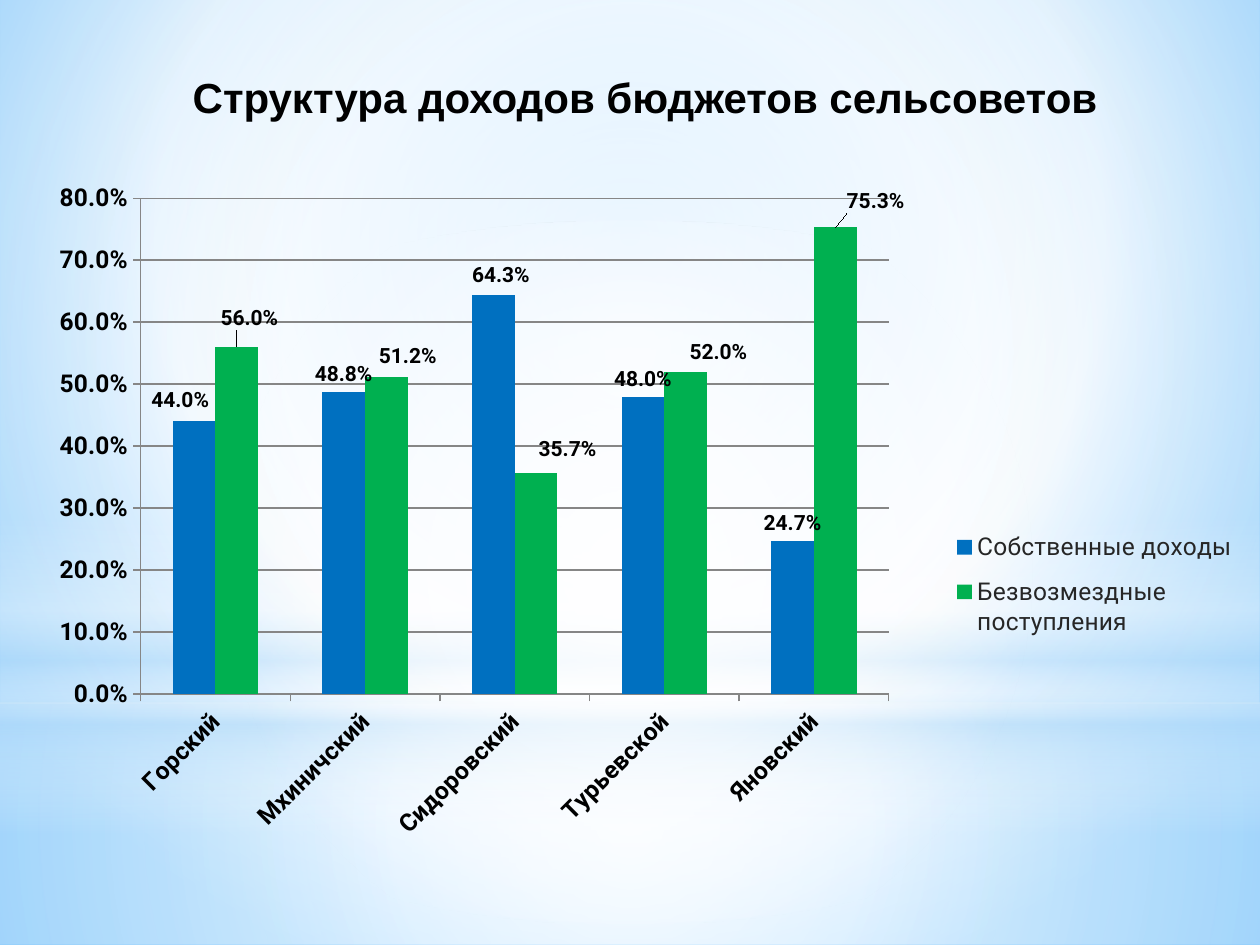
from lxml.etree import SubElement
from pptx import Presentation
from pptx.chart.data import CategoryChartData
from pptx.dml.color import RGBColor
from pptx.enum.chart import XL_CHART_TYPE as ChartType, XL_LABEL_POSITION as LabelPos
from pptx.enum.chart import XL_LEGEND_POSITION as LegendPos, XL_TICK_MARK as Tick
from pptx.enum.shapes import MSO_SHAPE as Shape
from pptx.enum.text import MSO_AUTO_SIZE as AutoSize, PP_ALIGN as Align
from pptx.oxml.ns import qn
from pptx.util import Inches, Pt

BLACK = RGBColor(0, 0, 0)
LEGEND_GREY = RGBColor(0x26, 0x26, 0x26)
AXIS_GREY = RGBColor(0x86, 0x86, 0x86)
BLUE = RGBColor(0x00, 0x70, 0xC0)
GREEN = RGBColor(0x00, 0xB0, 0x50)
WHITE = RGBColor(0xFF, 0xFF, 0xFF)
PALE_BLUE = RGBColor(0xB4, 0xDC, 0xFA)
SKY = RGBColor(0x9E, 0xD5, 0xFF)
DEEP_SKY = RGBColor(0x5B, 0xB9, 0xFF)

CENTRE = (50, 50, 50, 50)
GLOWS = [
    (Shape.RECTANGLE, 5.58, 1.92, [(0, WHITE, 91), (37, WHITE, 76), (100, PALE_BLUE, 79)], CENTRE),
    (Shape.RECTANGLE, 0, 5.58, [(0, WHITE, 89), (48, WHITE, 62), (100, PALE_BLUE, 79)], CENTRE),
    (Shape.RECTANGLE, 4.12, 2.5, [(0, WHITE, 0), (29, WHITE, 30), (45, PALE_BLUE, 40),
                                  (55, WHITE, 26), (65, PALE_BLUE, 60), (100, WHITE, 0)], None),
    (Shape.OVAL, 1.75, 5.58, [(0, WHITE, 100), (56, WHITE, 0)], CENTRE),
]
CHART_WIDTH, CHART_HEIGHT = 9.72, 5.91
COUNCILS = ["Горский", "Мхиничский", "Сидоровский", "Турьевской", "Яновский"]
INCOMES = [
    ("Собственные доходы", BLUE, [0.44, 0.488, 0.643, 0.48, 0.247],
     {0: (-0.11, -0.03), 2: (0.06, -0.02)}),
    ("Безвозмездные поступления", GREEN, [0.56, 0.512, 0.357, 0.52, 0.753],
     {0: (0.1, -0.09), 1: (0.17, -0.02), 2: (0.25, -0.05), 3: (0.26, -0.02), 4: (0.32, -0.07)}),
]


def set_gradient(fill, owner, stops, focus):
    """Fill with percent stops, circular around focus or vertical without one."""
    fill.gradient()
    gradient = owner.find(".//" + qn("a:gradFill"))
    for child in list(gradient):
        gradient.remove(child)
    stop_list = SubElement(gradient, qn("a:gsLst"))
    for position, color, opacity in stops:
        stop = SubElement(stop_list, qn("a:gs"), pos=str(position * 1000))
        tint = SubElement(stop, qn("a:srgbClr"), val=str(color))
        SubElement(tint, qn("a:alpha"), val=str(opacity * 1000))
    if focus:
        circle = SubElement(gradient, qn("a:path"), path="circle")
        sides = {side: str(part * 1000) for side, part in zip("ltrb", focus)}
        SubElement(circle, qn("a:fillToRect"), **sides)
    else:
        SubElement(gradient, qn("a:lin"), ang="5400000", scaled="0")


def add_glow(slide, preset, top, height, stops, focus):
    """Add a full-width translucent gradient shape."""
    glow = slide.shapes.add_shape(preset, 0, Inches(top), Inches(10), Inches(height))
    glow.shadow.inherit = False
    glow.line.fill.background()
    set_gradient(glow.fill, glow.element.spPr, stops, focus)


def style_font(font, size, color=BLACK, bold=False, name="Roboto"):
    """Set the face, size, colour and weight of a font."""
    font.name, font.size, font.bold = name, Pt(size), bold
    font.color.rgb = color


def add_title(slide, title):
    """Add the centred slide heading."""
    box = slide.shapes.add_textbox(Inches(0.59), Inches(0.52), Inches(9.06), Inches(0.5))
    frame = box.text_frame
    frame.word_wrap = True
    frame.auto_size = AutoSize.SHAPE_TO_FIT_TEXT
    heading = frame.paragraphs[0]
    heading.alignment = Align.CENTER
    run = heading.add_run()
    run.text = title
    style_font(run.font, 24, bold=True, name="Arial")


def set_layout(parent, index, **values):
    """Give a chart part a manual layout at a child index."""
    for old in parent.findall(qn("c:layout")):
        parent.remove(old)
    layout = SubElement(parent, qn("c:layout"))
    parent.insert(index, layout)
    manual = SubElement(layout, qn("c:manualLayout"))
    for tag, value in values.items():
        SubElement(manual, qn("c:" + tag), val=str(value))


def style_axis(axis):
    """Set the text, line and ticks of an axis."""
    style_font(axis.tick_labels.font, 14, bold=True)
    axis.format.line.color.rgb = AXIS_GREY
    axis.format.line.width = Pt(0.75)
    axis.major_tick_mark, axis.minor_tick_mark = Tick.OUTSIDE, Tick.NONE


def style_series(series, color, offsets):
    """Colour a series and label its columns, shifting labels by inches."""
    series.format.fill.solid()
    series.format.fill.fore_color.rgb = color
    series.invert_if_negative = False
    labels = series.data_labels
    labels.show_value = True
    labels.number_format, labels.number_format_is_linked = "0.0%", False
    labels.position = LabelPos.OUTSIDE_END
    style_font(labels.font, 12, bold=True)
    for point in offsets:
        label = series.points[point].data_label
        style_font(label.font, 12, bold=True)
        label.position = LabelPos.OUTSIDE_END
    for label in series._element.iter(qn("c:dLbl")):
        right, down = offsets[int(label.find(qn("c:idx")).get("val"))]
        set_layout(label, 1, x=round(right / CHART_WIDTH, 4), y=round(down / CHART_HEIGHT, 4))
        number_format = SubElement(label, qn("c:numFmt"), formatCode="0.0%", sourceLinked="0")
        label.insert(2, number_format)


def add_income_chart(slide):
    """Add the clustered columns of council incomes."""
    incomes = CategoryChartData(number_format="0.0%")
    incomes.categories = COUNCILS
    for name, _, shares, _ in INCOMES:
        incomes.add_series(name, shares)
    chart = slide.shapes.add_chart(ChartType.COLUMN_CLUSTERED, Inches(0.28), Inches(1.39),
                                   Inches(CHART_WIDTH), Inches(CHART_HEIGHT), incomes).chart
    style_font(chart.font, 10)
    chart.has_title = False
    plot = chart.plots[0]
    plot.gap_width, plot.overlap, plot.vary_by_categories = 150, 0, False
    for series, (_, color, _, offsets) in zip(plot.series, INCOMES):
        style_series(series, color, offsets)

    councils, shares = chart.category_axis, chart.value_axis
    style_axis(councils)
    style_axis(shares)
    councils._element.find(".//" + qn("a:bodyPr")).set("rot", "-2700000")
    shares.minimum_scale, shares.maximum_scale, shares.major_unit = 0, 0.8, 0.1
    shares.tick_labels.number_format = "0.0%"
    shares.tick_labels.number_format_is_linked = False
    shares.has_major_gridlines = True
    shares.major_gridlines.format.line.color.rgb = AXIS_GREY
    shares.major_gridlines.format.line.width = Pt(0.75)

    chart.has_legend = True
    chart.legend.position = LegendPos.RIGHT
    chart.legend.include_in_layout = False
    style_font(chart.legend.font, 14, LEGEND_GREY)
    set_layout(chart.legend._element, 1, xMode="edge", yMode="edge", x=0.74, y=0.46, w=0.25, h=0.18)
    set_layout(chart._chartSpace.find(".//" + qn("c:plotArea")), 0, layoutTarget="inner",
               xMode="edge", yMode="edge", x=0.086, y=0.031, w=0.611, h=0.666)


def main():
    """Build and save the slide."""
    deck = Presentation()
    deck.slide_width, deck.slide_height = Inches(10), Inches(7.5)
    slide = deck.slides.add_slide(deck.slide_layouts[6])
    sky = [(0, SKY, 100), (60, WHITE, 100), (100, DEEP_SKY, 100)]
    set_gradient(slide.background.fill, slide.element, sky, (20, 10, 20, 60))
    for glow in GLOWS:
        add_glow(slide, *glow)
    add_title(slide, "Структура доходов бюджетов сельсоветов")
    add_income_chart(slide)
    deck.save("out.pptx")


if __name__ == "__main__":
    main()
